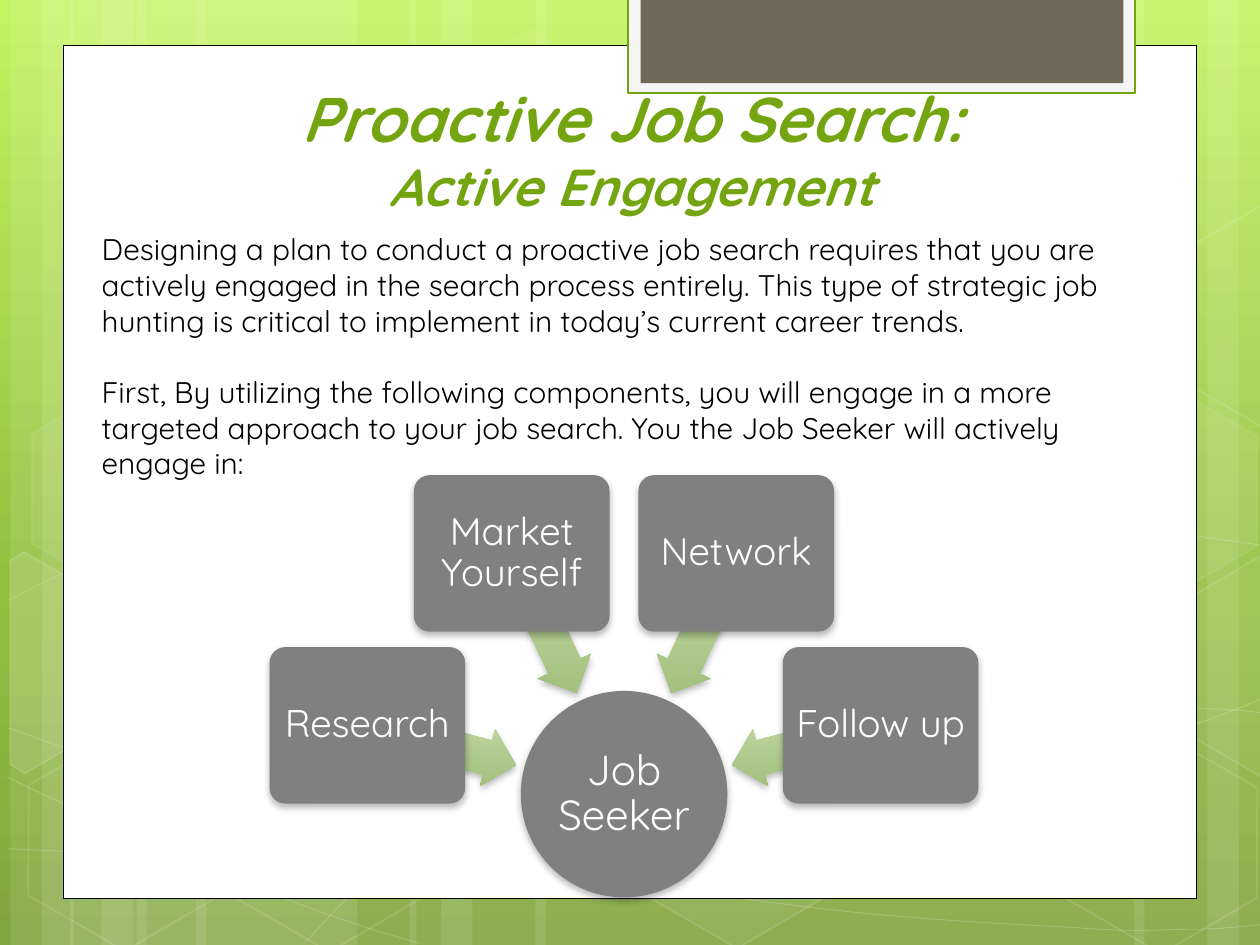
import copy
import math

from lxml import etree
from pptx import Presentation
from pptx.dml.color import RGBColor
from pptx.enum import shapes, text
from pptx.oxml import ns
from pptx.util import Pt

W, H = 720, 540
FONT = "Quicksand"
WHITE, GREEN, GREY = "FFFFFF", "74A510", "808080"
KIND = shapes.MSO_SHAPE

# (left, width) of the light stripes
STRIPES = [(78, 126), (6, 36), (24, 60), (112, 126), (40, 36), (58, 60),
           (528, 126), (690, 36), (648, 60), (306, 222), (234, 36), (252, 60)]

# Start point, then segments: Bezier (two control points and an end) or straight (an end)
WAVES = [
    ((5, 485), [(44, 487, 83, 489, 137, 488), (191, 487, 258, 486, 330, 479),
                (402, 472, 504, 458, 570, 444), (635, 431, 703, 409, 725, 397)]),
    ((5, 343), [(26, 332, 47, 321, 87, 310), (128, 300, 186, 284, 250, 279),
                (314, 274, 392, 273, 471, 279), (550, 284, 682, 307, 725, 312)]),
    ((4, 444), [(87, 484, 178, 523, 240, 539)]),
    ((5, 416), [(27, 424, 50, 432, 92, 444), (134, 454, 197, 472, 257, 485),
                (317, 497, 392, 510, 452, 517), (512, 525, 576, 528, 614, 530),
                (652, 533, 662, 531, 680, 531), (699, 531, 712, 529, 725, 528)]),
    ((174, 539), [(187, 525, 200, 510, 217, 498), (235, 485, 259, 470, 279, 460),
                  (300, 450, 312, 446, 338, 438), (364, 431, 413, 421, 438, 416),
                  (464, 411, 467, 411, 490, 410), (512, 408, 547, 405, 572, 405),
                  (597, 404, 638, 405, 638, 405), (686, 405),
                  (699, 405, 711, 406, 718, 407), (724, 408, 722, 407, 724, 408)]),
]

# (left, top, fill opacity, line opacity)
HEXAGONS = [(240.5, 26, 4, 8), (358, 424, 6, 12), (8, 425.5, None, 12),
            (10, 224.5, 7, 8), (125, 426, None, 12), (542, 326, 10, 12),
            (600.5, 427, None, 12), (600.5, 226, 7, 8)]

# (fill opacity, corners) of the hexagons cut off by the slide edge
CUT_HEXAGONS = [
    (10, [(5.8, 320.4), (13.7, 315.4), (69, 347), (68.4, 410.4), (14.4, 442), (5.8, 437)]),
    (4, [(666.7, 349.2), (720.7, 317.5), (726.5, 321), (726.5, 441.4), (721.4, 444.2), (666.7, 412.6)]),
    (None, [(666.7, 149), (720.7, 117.4), (727, 121), (726.5, 241.2), (721.4, 244), (666.7, 212.4)]),
]


def rgb(color):
    return RGBColor.from_string(color)


def fade(parent, opacity):
    for clr in parent.findall(".//" + ns.qn("a:srgbClr")):
        etree.SubElement(clr, ns.qn("a:alpha"), val=str(opacity * 1000))


def style(sp, fill=None, line=None, width=1, fill_opacity=100, line_opacity=100):
    sp.shadow.inherit = False
    if fill:
        sp.fill.solid()
        sp.fill.fore_color.rgb = rgb(fill)
        if fill_opacity < 100:
            fade(sp.element.spPr.find(ns.qn("a:solidFill")), fill_opacity)
    else:
        sp.fill.background()
    if line:
        sp.line.color.rgb = rgb(line)
        sp.line.width = Pt(width)
        if line_opacity < 100:
            fade(sp.element.spPr.find(ns.qn("a:ln")), line_opacity)
    else:
        sp.line.fill.background()


def add_shape(s, kind, x, y, w, h, **look):
    sp = s.shapes.add_shape(kind, Pt(x), Pt(y), Pt(w), Pt(h))
    style(sp, **look)
    return sp


def add_outline(s, points, close, **look):
    (x, y), *rest = [(Pt(px), Pt(py)) for px, py in points]
    builder = s.shapes.build_freeform(x, y)
    builder.add_line_segments(rest, close=close)
    sp = builder.convert_to_shape()
    style(sp, **look)
    return sp


def add_wave(s, start, segments, **look):
    """Join the end points with lines, then bend those that have control points."""
    sp = add_outline(s, [start] + [seg[-2:] for seg in segments], False, **look)
    lines = sp.element.findall(".//" + ns.qn("a:lnTo"))
    for line, seg in zip(lines, segments):
        if len(seg) == 6:
            curve = etree.Element(ns.qn("a:cubicBezTo"))
            for x, y in zip(seg[::2], seg[1::2]):
                etree.SubElement(curve, ns.qn("a:pt"), x=str(Pt(x) - sp.left), y=str(Pt(y) - sp.top))
            line.getparent().replace(line, curve)


def set_gradient(fill, element, stops):
    """Fill from top to bottom with (percent, colour) stops."""
    fill.gradient()
    fill.gradient_angle = 270
    stop_list = element.find(".//" + ns.qn("a:gsLst"))
    stop_list.getparent().set("rotWithShape", "0")
    while len(stop_list) < len(stops):
        stop_list.append(copy.deepcopy(stop_list[-1]))
    for stop, (percent, color) in zip(fill.gradient_stops, stops):
        stop.position = percent / 100
        stop.color.rgb = rgb(color)


def add_shadow(sp):
    effects = sp.element.spPr.find(ns.qn("a:effectLst"))
    shadow = etree.SubElement(effects, ns.qn("a:outerShdw"), blurRad=str(Pt(4)),
                              dist=str(Pt(2)), dir="5400000", rotWithShape="0")
    etree.SubElement(shadow, ns.qn("a:srgbClr"), val="000000")
    fade(shadow, 28)


def draw_backdrop(s):
    set_gradient(s.background.fill, s.element,
                 [(0, "C3F35F"), (62, "93BF3F"), (100, "81A53E")])
    for x, w in STRIPES:
        add_shape(s, KIND.RECTANGLE, x, 0, w, H, fill=WHITE, fill_opacity=10)
    for start, segments in WAVES:
        add_wave(s, start, segments, line=WHITE, width=0.5, line_opacity=20)
    for x, y, fill_opacity, line_opacity in HEXAGONS:
        sp = add_shape(s, KIND.HEXAGON, x, y, 126, 109.4, fill=fill_opacity and WHITE,
                       fill_opacity=fill_opacity or 100, line=WHITE, line_opacity=line_opacity)
        sp.adjustments[0] = 0.285
        sp.rotation = 30
    for fill_opacity, corners in CUT_HEXAGONS:
        add_outline(s, corners, True, fill=fill_opacity and WHITE,
                    fill_opacity=fill_opacity or 100, line=WHITE, line_opacity=12)


def draw_panel(s, x, y, w, h):
    add_shape(s, KIND.RECTANGLE, x, y, w, h, fill=WHITE, line="000000", width=0.5)
    add_shape(s, KIND.RECTANGLE, x + 323, -1.5, 289.5, 54.5, fill="F5F5F5", line=GREEN, width=1.25)
    add_shape(s, KIND.RECTANGLE, x + 330, -1.5, 276, 49, fill="71685A")


def add_text_box(s, x, y, w, h, anchor):
    tf = s.shapes.add_textbox(Pt(x), Pt(y), Pt(w), Pt(h)).text_frame
    tf.word_wrap = True
    tf.vertical_anchor = anchor
    return tf


def draw_title(s, x, y, w, h):
    p = add_text_box(s, x, y, w, h, text.MSO_ANCHOR.BOTTOM).paragraphs[0]
    p.alignment = text.PP_ALIGN.CENTER
    f = p.font
    f.name, f.bold, f.italic, f.color.rgb = FONT, True, True, rgb(GREEN)
    for i, (line, size) in enumerate([("Proactive Job Search:", 36), ("Active Engagement", 29.7)]):
        if i:
            p.add_line_break()
        r = p.add_run()
        r.text, r.font.size = line, Pt(size)


def draw_body(s, x, y, w, h):
    tf = add_text_box(s, x, y, w, h, text.MSO_ANCHOR.TOP)
    tf.text = ("Designing a plan to conduct a proactive job search requires that you are actively "
               "engaged in the search process entirely. This type of strategic job hunting is "
               "critical to implement in today’s current career trends.\n"
               "First, By utilizing the following components, you will engage in a more targeted "
               "approach to your job search. You the Job Seeker will actively engage in:")
    for p in tf.paragraphs:
        p.font.name, p.font.size, p.font.color.rgb = FONT, Pt(17), rgb("000000")
    tf.paragraphs[1].space_before = Pt(20.4)


def add_node(s, kind, cx, cy, w, h, label, size, inset):
    sp = add_shape(s, kind, cx - w / 2, cy - h / 2, w, h, fill=GREY)
    add_shadow(sp)
    tf = sp.text_frame
    tf.word_wrap = True
    tf.vertical_anchor = text.MSO_ANCHOR.MIDDLE
    tf.margin_left = tf.margin_right = tf.margin_top = tf.margin_bottom = Pt(inset)
    tf.text = label
    p = tf.paragraphs[0]
    p.alignment, p.line_spacing = text.PP_ALIGN.CENTER, 0.9
    p.font.name, p.font.size, p.font.color.rgb = FONT, Pt(size), rgb(WHITE)
    return sp


def draw_radial(s, cx, cy, labels):
    """A hub with boxes fanned out above it, each with an arrow to the hub."""
    add_node(s, KIND.OVAL, cx, cy, 118, 118, "Job Seeker", 24, 1.5)
    for i, label in enumerate(labels):
        angle = 195 + 50 * i
        dx, dy = math.cos(math.radians(angle)), math.sin(math.radians(angle))
        arrow = add_shape(s, KIND.LEFT_ARROW, cx + 107.7 * dx - 43.8, cy + 107.7 * dy - 16.8, 87.6, 33.6)
        arrow.adjustments[0], arrow.adjustments[1] = 0.6, 0.5
        arrow.rotation = angle
        set_gradient(arrow.fill, arrow.element, [(0, "C8DFAB"), (100, "A0BE7B")])
        add_shadow(arrow)
        box = add_node(s, KIND.ROUNDED_RECTANGLE, cx + 151.8 * dx, cy + 151.8 * dy,
                       111.8, 89.4, label, 22, 3.3)
        box.adjustments[0] = 0.1


def main():
    prs = Presentation()
    prs.slide_width, prs.slide_height = Pt(W), Pt(H)
    s = prs.slides.add_slide(prs.slide_layouts[6])
    draw_backdrop(s)
    draw_panel(s, 36, 26, 648, 487.2)
    draw_radial(s, 356.6, 453.8, ["Research", "Market Yourself", "Network", "Follow up"])
    draw_title(s, 42, 62.6, 638.5, 65)
    draw_body(s, 51, 128.4, 620, 151)
    prs.save("out.pptx")


if __name__ == "__main__":
    main()
